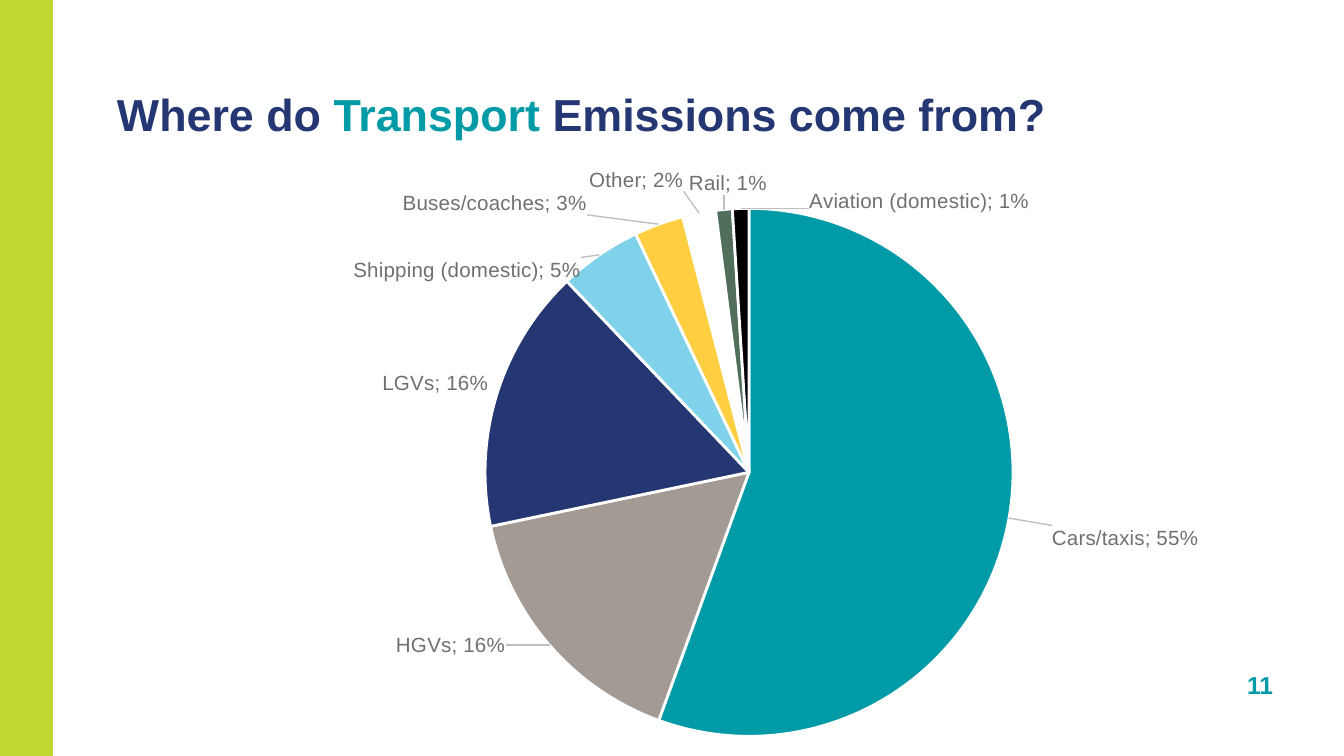
from lxml import etree
from pptx import Presentation
from pptx.chart.data import CategoryChartData
from pptx.dml.color import RGBColor
from pptx.enum.chart import XL_CHART_TYPE, XL_LABEL_POSITION
from pptx.enum.shapes import MSO_SHAPE
from pptx.enum.text import MSO_ANCHOR, PP_ALIGN
from pptx.oxml import parse_xml
from pptx.util import Emu, Pt

PIE = XL_CHART_TYPE.PIE
OUT = XL_LABEL_POSITION.OUTSIDE_END
RECT = MSO_SHAPE.RECTANGLE
BOTTOM = MSO_ANCHOR.BOTTOM
LEFT, RIGHT = PP_ALIGN.LEFT, PP_ALIGN.RIGHT

LIME = RGBColor(0xC0, 0xD6, 0x31)
TEAL = RGBColor(0x00, 0x9B, 0xA7)
NAVY = RGBColor(0x25, 0x37, 0x73)
STONE = RGBColor(0xA3, 0x9A, 0x94)
SKY = RGBColor(0x7F, 0xD2, 0xEA)
GOLD = RGBColor(0xFF, 0xCF, 0x41)
WHITE = RGBColor(0xFF, 0xFF, 0xFF)
GREEN = RGBColor(0x50, 0x6E, 0x5A)
BLACK = RGBColor(0x00, 0x00, 0x00)
GREY = RGBColor(0x70, 0x6F, 0x72)
DARK = RGBColor(0x41, 0x40, 0x42)
FONT = "Arial"

TITLE = [("Where do ", NAVY), ("Transport ", TEAL), ("Emissions come from?", NAVY)]
PAGE = [("11", TEAL)]
SLICES = [
    ("Cars/taxis", 0.55, TEAL, (35, 6)),
    ("HGVs", 0.16, STONE, (-38, -17)),
    ("LGVs", 0.16, NAVY, (-1, 3)),
    ("Shipping (domestic)", 0.05, SKY, (-14, 33)),
    ("Buses/coaches", 0.03, GOLD, (-69, -2)),
    ("Other", 0.02, WHITE, (-14, -14)),
    ("Rail", 0.01, GREEN, (44, -7)),
    ("Aviation (domestic)", 0.01, BLACK, (179, 12)),
]
CHART = (142, 157, 1185, 598)
PLOT = (343, 51, 528, 529)

NS = ('xmlns:c="http://schemas.openxmlformats.org/drawingml/2006/chart" '
      'xmlns:a="http://schemas.openxmlformats.org/drawingml/2006/main"')
C = "{http://schemas.openxmlformats.org/drawingml/2006/chart}"


def px(n):
    return Emu(round(n * 914400 / 134.4))


def write(slide, box, parts, size, align, pad):
    frame = slide.shapes.add_textbox(*map(px, box)).text_frame
    frame.word_wrap = True
    frame.vertical_anchor = BOTTOM
    frame.margin_left = frame.margin_right = px(pad)
    frame.margin_top = frame.margin_bottom = px(pad / 2)
    para = frame.paragraphs[0]
    para.alignment = align
    for text, color in parts:
        run = para.add_run()
        run.text = text
        run.font.name, run.font.size, run.font.bold = FONT, Pt(size), True
        run.font.color.rgb = color


def style(font, size, color):
    font.name, font.size, font.bold = FONT, Pt(size), False
    font.color.rgb = color


def layout(head, x, y, tail=""):
    return parse_xml(
        f'<c:layout {NS}><c:manualLayout>{head}<c:x val="{x / CHART[2]:.4f}"/>'
        f'<c:y val="{y / CHART[3]:.4f}"/>{tail}</c:manualLayout></c:layout>')


def finish(label):
    label.find(C + "showVal").set("val", "1")
    label.find(C + "showCatName").set("val", "1")
    label.find(C + "showPercent").set("val", "0")
    mark = parse_xml(f"<c:separator {NS}>; </c:separator>")
    last = label.find(C + "showBubbleSize")
    if last is None:
        last = label.find(C + "showPercent")
    last.addnext(mark)


def draw(slide):
    data = CategoryChartData(number_format="0%")
    data.categories = [row[0] for row in SLICES]
    data.add_series("Series 1", [row[1] for row in SLICES])
    chart = slide.shapes.add_chart(PIE, *map(px, CHART), data).chart
    chart.has_legend = chart.has_title = False
    style(chart.font, 10, DARK)
    plot = chart.plots[0]
    plot.vary_by_categories = True
    series = plot.series[0]

    labels = series.data_labels
    style(labels.font, 11, GREY)
    labels.number_format, labels.number_format_is_linked = "0%", False
    labels.position = OUT
    for i, (name, value, color, shift) in enumerate(SLICES):
        point = series.points[i]
        point.format.fill.solid()
        point.format.fill.fore_color.rgb = color
        point.format.line.color.rgb = WHITE
        point.format.line.width = Pt(1.5)
        style(point.data_label.font, 11, GREY)
        point.data_label.position = OUT

    group = series._element.find(C + "dLbls")
    for label, row in zip(group.findall(C + "dLbl"), SLICES):
        label.find(C + "idx").addnext(layout("", *row[3]))
        form = parse_xml(f'<c:numFmt {NS} formatCode="0%" sourceLinked="0"/>')
        label.find(C + "layout").addnext(form)
        finish(label)
    finish(group)
    for old in group.findall(C + "showLeaderLines"):
        group.remove(old)
    etree.SubElement(group, C + "showLeaderLines").set("val", "1")
    group.append(parse_xml(
        f'<c:leaderLines {NS}><c:spPr><a:ln w="9525"><a:solidFill>'
        '<a:srgbClr val="BFBFBF"/></a:solidFill></a:ln></c:spPr></c:leaderLines>'))

    area = chart._chartSpace.chart.plotArea
    for old in area.findall(C + "layout"):
        area.remove(old)
    x, y, w, h = PLOT
    head = ('<c:layoutTarget val="inner"/><c:xMode val="edge"/>'
            '<c:yMode val="edge"/>')
    tail = f'<c:w val="{w / CHART[2]:.4f}"/><c:h val="{h / CHART[3]:.4f}"/>'
    area.insert(0, layout(head, x, y, tail))


def main():
    deck = Presentation()
    deck.slide_width, deck.slide_height = px(1344), px(756)
    slide = deck.slides.add_slide(deck.slide_layouts[6])
    bar = slide.shapes.add_shape(RECT, *map(px, (-16, -5, 69, 767)))
    bar.shadow.inherit = False
    bar.fill.solid()
    bar.fill.fore_color.rgb = LIME
    bar.line.fill.background()
    write(slide, (1180, 663, 106, 43), PAGE, 13.1, RIGHT, 13)
    write(slide, (117, 82, 1000, 58), TITLE, 24, LEFT, 0)
    draw(slide)
    deck.save("out.pptx")


if __name__ == "__main__":
    main()
